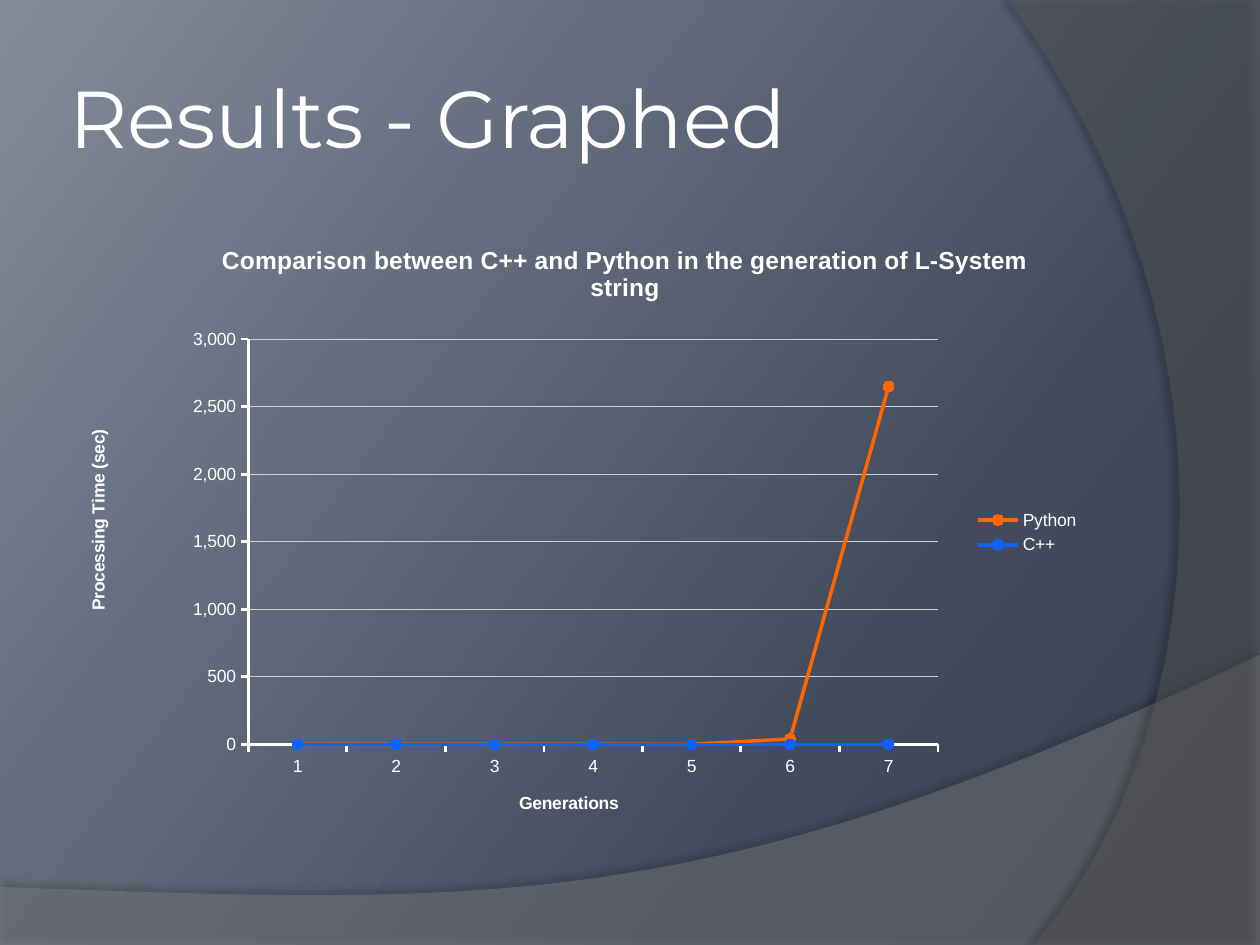
from copy import deepcopy
from dataclasses import dataclass

from lxml.etree import SubElement
from pptx import Presentation
from pptx.chart.data import CategoryChartData
from pptx.dml.color import RGBColor
from pptx.enum.chart import XL_CHART_TYPE as ChartType
from pptx.enum.chart import XL_LEGEND_POSITION as LegendPosition
from pptx.enum.chart import XL_MARKER_STYLE as MarkerStyle
from pptx.enum.chart import XL_TICK_MARK as TickMark
from pptx.enum.text import MSO_ANCHOR, MSO_AUTO_SIZE, PP_ALIGN
from pptx.oxml import parse_xml
from pptx.oxml.ns import nsdecls, qn
from pptx.util import Cm, Pt


@dataclass(frozen=True)
class Theme:
    """Colours, fonts and sizes of the slide."""
    backdrop: tuple = ((0, "373F4D"), (30, "414B5C"), (100, "838B9A"))
    backdrop_angle: int = 143
    wave: str = "7F7F7F"
    side: str = "5E5E5E"
    shadow: str = "000000"
    text: str = "FFFFFF"
    grid: str = "D0D0D0"
    series: tuple = ("FF6600", "1060FF")
    title_font: str = "Montserrat"
    chart_font: str = "Arial"
    title_size: int = 46
    chart_title_size: int = 14
    label_size: int = 10


@dataclass(frozen=True)
class Box:
    """A rectangle in centimetres."""
    left: float
    top: float
    width: float
    height: float

    def lengths(self):
        """Return left, top, width and height as lengths."""
        return Cm(self.left), Cm(self.top), Cm(self.width), Cm(self.height)

    def point(self, x, y):
        """Return the place at the given fractions of the box."""
        return Cm(self.left + x * self.width), Cm(self.top + y * self.height)


THEME = Theme()


def rgb(value):
    """Turn a hex string into a colour."""
    return RGBColor.from_string(value)


def style_font(font, size, bold=False, name=THEME.chart_font):
    """Give a font its face, size, weight and the text colour."""
    font.name, font.size, font.bold = name, Pt(size), bold
    font.color.rgb = rgb(THEME.text)


def paint_backdrop(slide):
    """Fill the background with the three-stop gradient."""
    fill = slide.background.fill
    fill.gradient()
    fill.gradient_angle = THEME.backdrop_angle
    last = fill.gradient_stops[-1].color._xFill
    last.addnext(deepcopy(last))
    for stop, (position, colour) in zip(fill.gradient_stops, THEME.backdrop):
        stop.position = position / 100
        stop.color.rgb = rgb(colour)


def bezier(controls, steps=60):
    """Return points along a cubic curve."""
    points = []
    for step in range(steps + 1):
        t = step / steps
        weights = ((1 - t) ** 3, 3 * t * (1 - t) ** 2, 3 * t * t * (1 - t), t ** 3)
        points.append(tuple(sum(w * c[axis] for w, c in zip(weights, controls))
                            for axis in (0, 1)))
    return points


def add_curved_panel(slide, box, corners, controls, colour, alpha, shadow):
    """Draw a translucent panel with one curved edge and a soft shadow."""
    points = [box.point(*place) for place in corners + bezier(controls)]
    builder = slide.shapes.build_freeform(*points[0], scale=1.0)
    builder.add_line_segments(points[1:], close=True)
    shape = builder.convert_to_shape()
    shape.fill.solid()
    shape.fill.fore_color.rgb = rgb(colour)
    shape.line.fill.background()
    properties = shape._element.spPr
    colour_node = properties.find(qn("a:solidFill"))[0]
    SubElement(colour_node, qn("a:alpha"), val=str(alpha * 1000))
    shadow_alpha, blur, distance, direction = shadow
    properties.append(parse_xml(
        f'<a:effectLst {nsdecls("a")}><a:outerShdw blurRad="{Pt(blur)}" '
        f'dist="{Pt(distance)}" dir="{direction * 60000}" algn="ctr" rotWithShape="0">'
        f'<a:srgbClr val="{THEME.shadow}"><a:alpha val="{shadow_alpha * 1000}"/>'
        '</a:srgbClr></a:outerShdw></a:effectLst>'))


def place_title(slide, box, text):
    """Move and format the title placeholder, in front of the panels."""
    title = slide.shapes.title
    title._element.getparent().append(title._element)
    title.left, title.top, title.width, title.height = box.lengths()
    frame = title.text_frame
    frame.text = text
    frame.word_wrap, frame.auto_size = True, MSO_AUTO_SIZE.NONE
    frame.vertical_anchor = MSO_ANCHOR.MIDDLE
    frame.margin_left = frame.margin_right = Cm(0.13)
    frame.margin_top = frame.margin_bottom = Cm(0.13)
    paragraph = frame.paragraphs[0]
    paragraph.alignment = PP_ALIGN.LEFT
    style_font(paragraph.font, THEME.title_size, name=THEME.title_font)


def manual_layout(x, y, width=None, height=None):
    """Return a chart layout in fractions of the chart."""
    layout = parse_xml(f'<c:layout {nsdecls("c")}><c:manualLayout/></c:layout>')
    values = [("xMode", "edge"), ("yMode", "edge"), ("x", x), ("y", y)]
    if width:
        values = [("layoutTarget", "inner"), *values, ("w", width), ("h", height)]
    for name, value in values:
        SubElement(layout[0], qn(f"c:{name}"), val=str(value))
    return layout


def set_chart_title(title, text, size, x, y):
    """Write a chart or axis title at its place."""
    title.text_frame.text = text
    style_font(title.text_frame.paragraphs[0].font, size, bold=True)
    element = title._element
    for layout in element.findall(qn("c:layout")):
        element.remove(layout)
    element.find(qn("c:tx")).addnext(manual_layout(x, y))


def style_axis(axis, text, x, y):
    """Format an axis with its line, ticks and title."""
    axis.major_tick_mark, axis.minor_tick_mark = TickMark.OUTSIDE, TickMark.NONE
    axis.format.line.color.rgb = rgb(THEME.text)
    axis.format.line.width = Pt(1.5)
    style_font(axis.tick_labels.font, THEME.label_size)
    set_chart_title(axis.axis_title, text, THEME.label_size, x, y)


def add_timing_chart(slide, box):
    """Add the line chart of processing times."""
    data = CategoryChartData(number_format="#,##0")
    data.categories = [str(generation) for generation in range(1, 8)]
    data.add_series("Python", (0, 0, 0, 0, 0, 40, 2650))
    data.add_series("C++", (0,) * 7)
    chart = slide.shapes.add_chart(ChartType.LINE_MARKERS, *box.lengths(), data).chart
    style_font(chart.font, THEME.label_size)
    set_chart_title(
        chart.chart_title,
        "Comparison between C++ and Python in the generation of L-System string",
        THEME.chart_title_size, 0.15, 0.03)
    style_axis(chart.category_axis, "Generations", 0.44, 0.91)
    values = chart.value_axis
    style_axis(values, "Processing Time (sec)", 0.02, 0.33)
    values.minimum_scale, values.maximum_scale, values.major_unit = 0, 3000, 500
    values.tick_labels.number_format = "#,##0"
    values.tick_labels.number_format_is_linked = False
    values.major_gridlines.format.line.color.rgb = rgb(THEME.grid)
    values.major_gridlines.format.line.width = Pt(0.75)
    chart.has_legend = True
    chart.legend.position = LegendPosition.RIGHT
    chart.legend.include_in_layout = False
    style_font(chart.legend.font, THEME.label_size)
    plot = chart.plots[0]
    plot.vary_by_categories = False
    for series, colour in zip(plot.series, THEME.series):
        series.smooth = False
        series.format.line.color.rgb = rgb(colour)
        series.format.line.width = Pt(2)
        series.marker.style, series.marker.size = MarkerStyle.CIRCLE, 6
        series.marker.format.fill.solid()
        series.marker.format.fill.fore_color.rgb = rgb(colour)
        series.marker.format.line.color.rgb = rgb(colour)
    area = chart._chartSpace.chart.plotArea
    for layout in area.findall(qn("c:layout")):
        area.remove(layout)
    area.insert(0, manual_layout(0.18, 0.19, 0.67, 0.65))


def main():
    """Build and save the presentation."""
    presentation = Presentation()
    presentation.slide_width, presentation.slide_height = Cm(25.4), Cm(19.05)
    slide = presentation.slides.add_slide(presentation.slide_layouts[5])
    paint_backdrop(slide)
    add_curved_panel(slide, Box(0, 13.2, 25.4, 5.85), [(0, 1), (1, 1)],
                     [(1, 0), (0.56, 0.91), (0.39, 0.86), (0, 0.8)],
                     THEME.wave, 45, (35, 4, 3.5, 270))
    add_curved_panel(slide, Box(20.32, 0, 5.08, 19.05), [(1, 0), (1, 1)],
                     [(0.1, 1), (0.68, 0.83), (1.09, 0.4), (0, 0)],
                     THEME.side, 40, (45, 4, 4, 180))
    place_title(slide, Box(1.27, 0.76, 20.75, 3.18), "Results - Graphed")
    add_timing_chart(slide, Box(1.27, 4.45, 20.75, 12.57))
    presentation.save("out.pptx")


if __name__ == "__main__":
    main()
